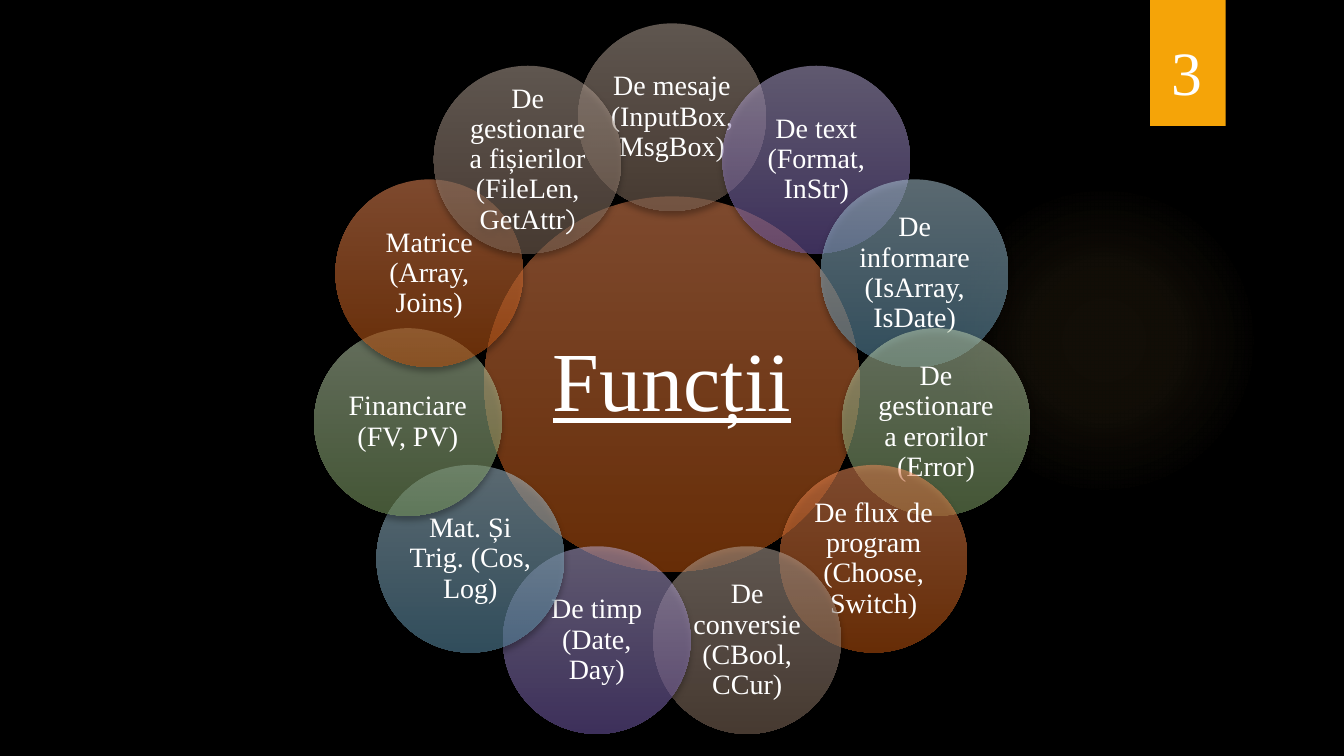
from math import cos, pi, sin

from lxml import etree
from pptx import Presentation
from pptx.dml.color import RGBColor
from pptx.enum.shapes import MSO_SHAPE
from pptx.enum.text import MSO_ANCHOR, MSO_AUTO_SIZE, PP_ALIGN
from pptx.oxml.ns import qn
from pptx.util import Pt

FONT = "Times New Roman"
CENTER_X, CENTER_Y = 480, 274.3
RING_RADIUS = 190.6
HUB_SIZE, PETAL_SIZE = 268, 134

ORANGE = ("FB935D", "CF5B0F")
TAUPE = ("BEAC9F", "8E7463")
PURPLE = ("C0B3DF", "7B61B6")
BLUE = ("B5D2E1", "639BB8")
GREEN = ("C8DBB9", "89AD6C")
PETAL_COLORS = (TAUPE, PURPLE, BLUE, GREEN, ORANGE)

# Clockwise from the top
PETALS = [
    "De mesaje (InputBox, MsgBox)",
    "De text (Format, InStr)",
    "De informare (IsArray, IsDate)",
    "De gestionare a erorilor (Error)",
    "De flux de program (Choose, Switch)",
    "De conversie (CBool, CCur)",
    "De timp (Date, Day)",
    "Mat. Și Trig. (Cos, Log)",
    "Financiare (FV, PV)",
    "Matrice (Array, Joins)",
    "De gestionare a fișierilor (FileLen, GetAttr",
]


def color(value):
    return RGBColor.from_string(value)


def add_child(parent, tag, **attributes):
    child = etree.SubElement(parent, qn(tag))
    for name, value in attributes.items():
        child.set(name, str(value))
    return child


def add_color(parent, value, opacity):
    element = add_child(parent, "a:srgbClr", val=value)
    add_child(element, "a:alpha", val=opacity * 1000)


def set_gradient(shape, stops, radial=False):
    """Fill with (position, colour, opacity) stops, all in percent."""
    gradient = etree.Element(qn("a:gradFill"), rotWithShape="1")
    stop_list = add_child(gradient, "a:gsLst")
    for position, value, opacity in stops:
        add_color(add_child(stop_list, "a:gs", pos=position * 1000), value, opacity)
    if radial:
        circle = add_child(gradient, "a:path", path="circle")
        add_child(circle, "a:fillToRect", l=50000, t=50000, r=50000, b=50000)
    else:
        add_child(gradient, "a:lin", ang=5400000, scaled=0)
    shape._element.spPr.find(qn("a:prstGeom")).addnext(gradient)


def set_shadow(shape, opacity, blur, distance):
    """Cast a black shadow straight down."""
    effects = shape._element.spPr.find(qn("a:effectLst"))
    shadow = add_child(effects, "a:outerShdw", blurRad=Pt(blur), dist=Pt(distance),
                       dir=5400000, algn="ctr", rotWithShape=0)
    add_color(shadow, "000000", opacity)


def add_plain_shape(slide, kind, left, top, width, height):
    shape = slide.shapes.add_shape(kind, Pt(left), Pt(top), Pt(width), Pt(height))
    shape.line.fill.background()
    shape.shadow.inherit = False
    return shape


def style_font(font, size):
    font.name = FONT
    font.size = Pt(size)
    font.color.rgb = color("FFFFFF")


def add_circle(slide, text, center_x, center_y, diameter, colors, size, inset):
    """Add a translucent labelled circle and return its paragraph."""
    circle = add_plain_shape(slide, MSO_SHAPE.OVAL, center_x - diameter / 2,
                             center_y - diameter / 2, diameter, diameter)
    set_gradient(circle, [(0, colors[0], 50), (100, colors[1], 50)])
    set_shadow(circle, 60, 4.5, 3)
    frame = circle.text_frame
    frame.word_wrap = True
    frame.vertical_anchor = MSO_ANCHOR.MIDDLE
    frame.margin_left = frame.margin_right = Pt(inset)
    frame.margin_top = frame.margin_bottom = Pt(inset)
    paragraph = frame.paragraphs[0]
    paragraph.add_run().text = text
    paragraph.alignment = PP_ALIGN.CENTER
    paragraph.line_spacing = 0.9
    style_font(paragraph.font, size)
    return paragraph


def add_glow(slide):
    glow = add_plain_shape(slide, MSO_SHAPE.OVAL, 677.5, 131.8, 221.8, 221.8)
    set_gradient(glow, [(0, "FAC96A", 7), (36, "FAC96A", 6), (69, "FAC96A", 0)],
                 radial=True)


def add_number_tab(slide, number):
    tab = add_plain_shape(slide, MSO_SHAPE.RECTANGLE, 821.5, 0, 54, 90)
    tab.fill.solid()
    tab.fill.fore_color.rgb = color("F5A408")
    set_shadow(tab, 45, 3, 1.5)
    box = slide.shapes.add_textbox(Pt(829.5), Pt(20.9), Pt(36.7), Pt(60.5))
    box.text_frame.word_wrap = True
    box.text_frame.auto_size = MSO_AUTO_SIZE.SHAPE_TO_FIT_TEXT
    paragraph = box.text_frame.paragraphs[0]
    paragraph.text = number
    style_font(paragraph.font, 44)


def add_flower(slide):
    hub = add_circle(slide, "Funcții", CENTER_X, CENTER_Y, HUB_SIZE, ORANGE, 60, 6)
    hub.font.underline = True
    for index, text in enumerate(PETALS):
        angle = 2 * pi * index / len(PETALS)
        petal = add_circle(slide, text, CENTER_X + RING_RADIUS * sin(angle),
                           CENTER_Y - RING_RADIUS * cos(angle), PETAL_SIZE,
                           PETAL_COLORS[index % len(PETAL_COLORS)], 20, 2)
    closing = petal.add_run()
    closing.text = ")"
    closing.font.name = "Quicksand"


def main():
    presentation = Presentation()
    presentation.slide_width, presentation.slide_height = Pt(960), Pt(540)
    slide = presentation.slides.add_slide(presentation.slide_layouts[6])
    slide.background.fill.solid()
    slide.background.fill.fore_color.rgb = color("000000")
    add_glow(slide)
    add_number_tab(slide, "3")
    add_flower(slide)
    presentation.save("out.pptx")


if __name__ == "__main__":
    main()
